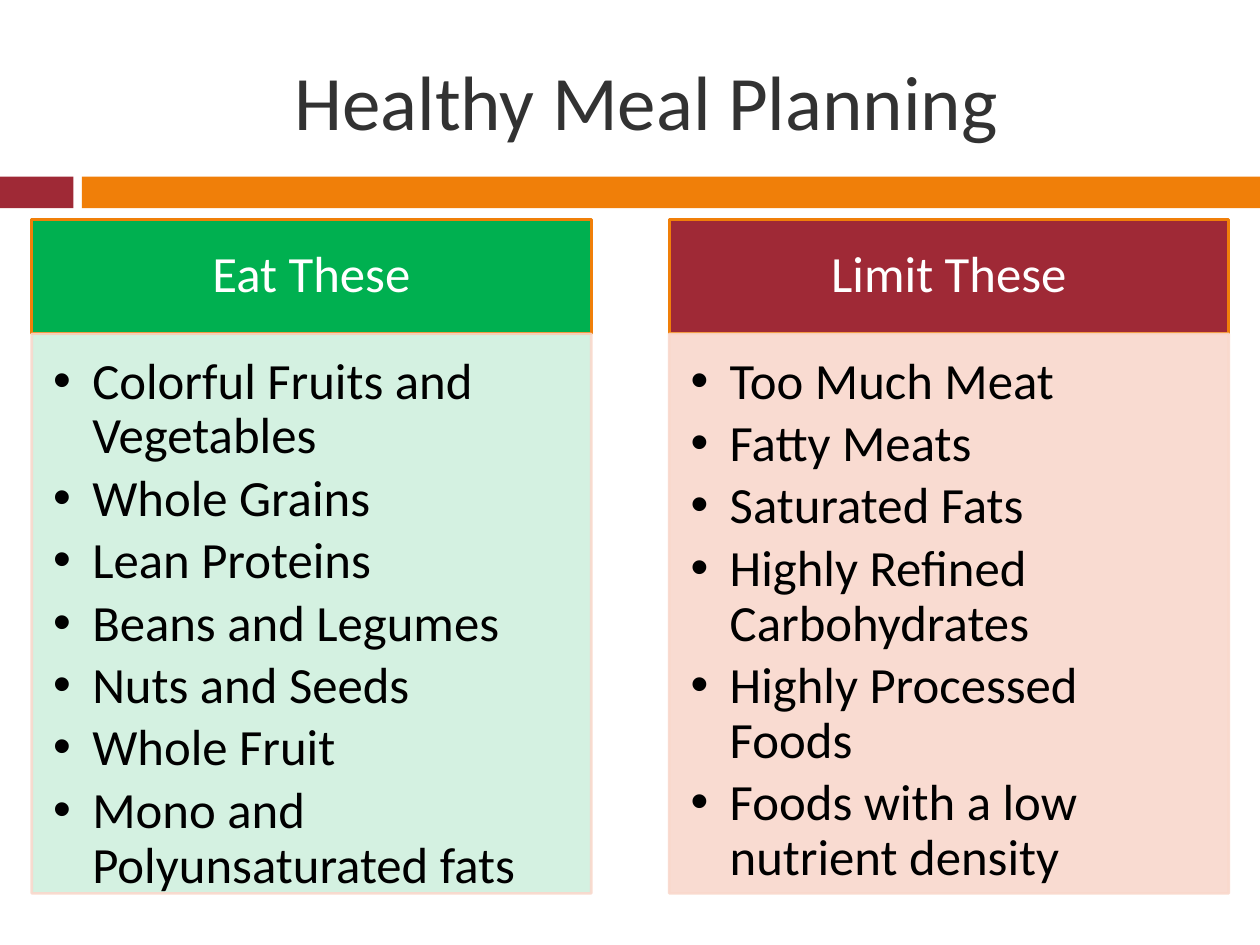
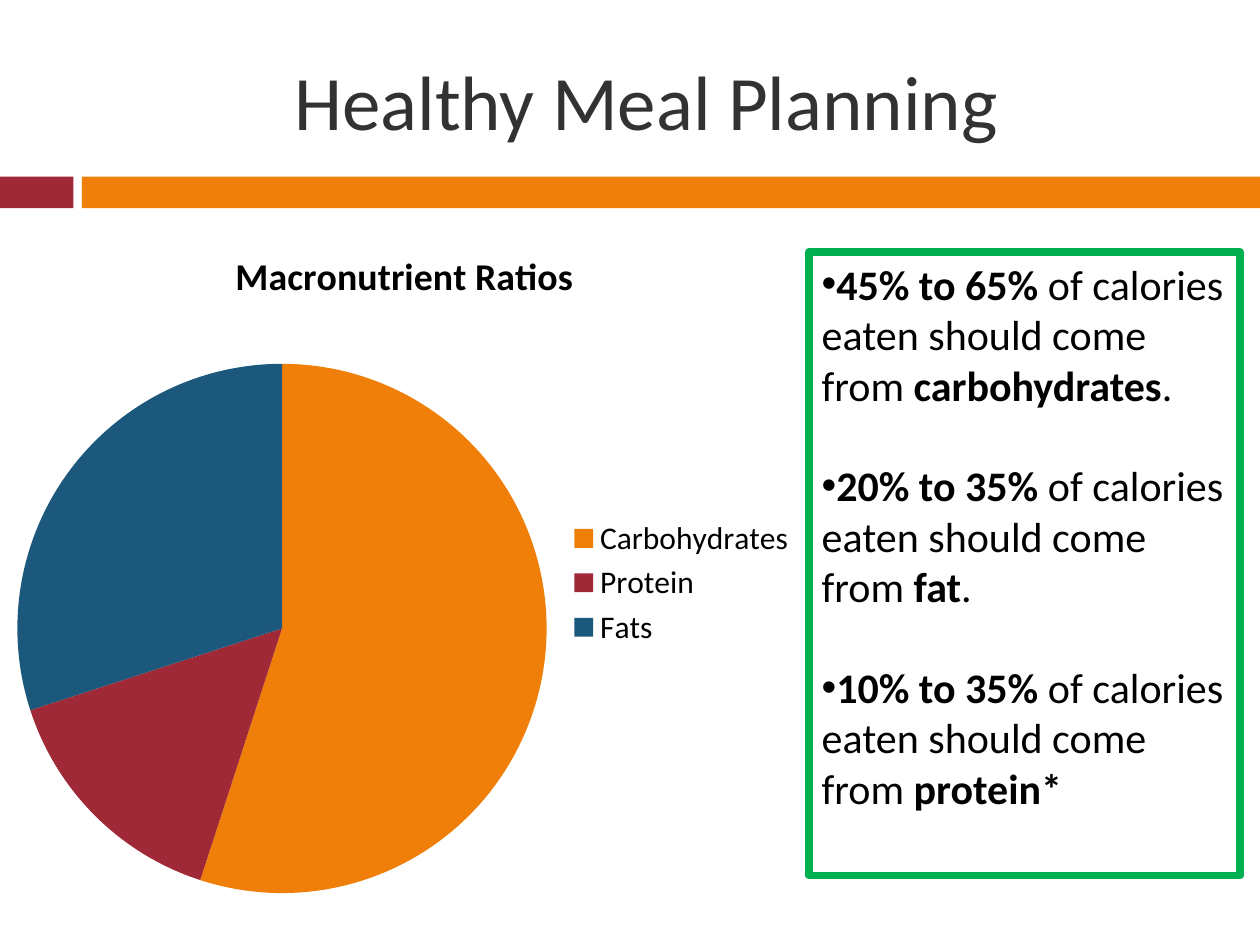
from lxml.etree import SubElement
from pptx import Presentation
from pptx.chart.data import CategoryChartData
from pptx.dml.color import RGBColor
from pptx.enum.chart import XL_CHART_TYPE, XL_LEGEND_POSITION
from pptx.enum.shapes import MSO_SHAPE
from pptx.enum.text import MSO_ANCHOR, MSO_AUTO_SIZE, PP_ALIGN
from pptx.oxml.ns import qn
from pptx.util import Cm, Pt

FONT = "Calibri"
COLORS = {
    "text": "000000", "title": "323232", "white": "FFFFFF",
    "orange": "F07F09", "red": "9F2936", "blue": "1B587C",
    "green": "00B050", "blush": "F9D8CC",
}
TITLE = "Healthy Meal Planning"
COMPARISON_LAYOUT, CONTENT_LAYOUT = 4, 1

EAT = ["Colorful Fruits and Vegetables", "Whole Grains", "Lean Proteins",
       "Beans and Legumes", "Nuts and Seeds", "Whole Fruit",
       "Mono and Polyunsaturated fats"]
LIMIT = ["Too Much Meat", "Fatty Meats", "Saturated Fats",
         "Highly Refined Carbohydrates", "Highly Processed Foods",
         "Foods with a low nutrient density"]
SHARES = {"Carbohydrates": (55, "orange"), "Protein": (15, "red"),
          "Fats": (30, "blue")}
ADVICE = [("45% to 65%", "carbohydrates", "."), ("20% to 35%", "fat", "."),
          ("10% to 35%", "protein*", "")]


def color(name):
    return RGBColor.from_string(COLORS[name])


def paint(fill, name, opacity=100):
    """Give a fill a solid colour, with opacity in percent."""
    fill.solid()
    fill.fore_color.rgb = color(name)
    if opacity < 100:
        tint = fill._xPr.find(qn("a:solidFill"))[0]
        SubElement(tint, qn("a:alpha"), val=str(opacity * 1000))


def outline(shape, name, width, opacity=100):
    shape.line.width = Pt(width)
    paint(shape.line.fill, name, opacity)


def style_font(font, size, name="text", bold=False):
    font.name, font.size, font.bold = FONT, Pt(size), bold
    font.color.rgb = color(name)


def add_span(para, text, size=24, name="text", bold=False):
    span = para.add_run()
    span.text = text
    style_font(span.font, size, name, bold)


def set_bullet(para, indent=0):
    """Add a round bullet with a hanging indent in centimetres."""
    properties = para._p.get_or_add_pPr()
    properties.set("marL", str(Cm(indent)))
    properties.set("indent", str(-Cm(indent)))
    SubElement(properties, qn("a:buChar"), char="•")


def place(box, left, top, width, height, anchor=MSO_ANCHOR.TOP, margins=None):
    """Move a placeholder and set up its text frame; lengths in centimetres."""
    box.left, box.top, box.width, box.height = map(Cm, (left, top, width, height))
    frame = box.text_frame
    frame.word_wrap = True
    frame.auto_size = MSO_AUTO_SIZE.NONE
    frame.vertical_anchor = anchor
    if margins:
        (frame.margin_left, frame.margin_top,
         frame.margin_right, frame.margin_bottom) = map(Cm, margins)
    return frame


def add_para(frame, index, align=PP_ALIGN.LEFT, line_spacing=1.0, after=0):
    para = frame.paragraphs[0] if index == 0 else frame.add_paragraph()
    para.alignment = align
    para.line_spacing = line_spacing
    para.space_before, para.space_after = Pt(0), Pt(after)
    return para


def add_band(page, left, width, name):
    band = page.shapes.add_shape(MSO_SHAPE.RECTANGLE, Cm(left), Cm(3.56),
                                 Cm(width), Cm(0.64))
    band.shadow.inherit = False
    paint(band.fill, name)
    band.line.fill.background()


def add_page(deck, layout):
    """Add a slide with the shared title and coloured bands."""
    page = deck.slides.add_slide(deck.slide_layouts[layout])
    add_band(page, 0, 1.48, "red")
    add_band(page, 1.65, 23.75, "orange")
    frame = place(page.shapes.title, 1.7, 0.64, 22.66, 2.74, MSO_ANCHOR.MIDDLE)
    add_span(add_para(frame, 0, PP_ALIGN.CENTER), TITLE, 44, "title")
    return page


def add_panel(heading, body, left, text, items, heading_fill, body_fill, opacity):
    """Fill one heading and the list below it."""
    width = 11.28
    frame = place(heading, left, 4.42, width, 2.31, MSO_ANCHOR.MIDDLE,
                  (0.58, 0.33, 0.58, 0.33))
    paint(heading.fill, heading_fill)
    outline(heading, "orange", 1.5)
    add_span(add_para(frame, 0, PP_ALIGN.CENTER, 0.9), text, 29, "white")

    frame = place(body, left, 6.73, width, 11.28,
                  margins=(0.43, 0.43, 0.58, 0.64))
    paint(body.fill, body_fill, opacity)
    outline(body, "blush", 1.5, 90)
    for index, item in enumerate(items):
        para = add_para(frame, index, line_spacing=0.9, after=4.35)
        set_bullet(para, 0.79)
        add_span(para, item, 29)


def add_ratio_chart(page):
    data = CategoryChartData()
    data.categories = list(SHARES)
    data.add_series("Series 1", [value for value, _ in SHARES.values()])
    chart = page.shapes.add_chart(XL_CHART_TYPE.PIE, Cm(0), Cm(4.45),
                                  Cm(16.31), Cm(14.6), data).chart
    style_font(chart.font, 18)
    chart.has_title = True
    add_span(chart.chart_title.text_frame.paragraphs[0],
             "Macronutrient Ratios", 21.6, bold=True)
    chart.has_legend = True
    chart.legend.position = XL_LEGEND_POSITION.RIGHT
    chart.legend.include_in_layout = False
    plot = chart.plots[0]
    plot.vary_by_categories = True
    for index, (_, name) in enumerate(SHARES.values()):
        paint(plot.series[0].points[index].format.fill, name)


def add_advice(box):
    frame = place(box, 16.31, 5.08, 8.69, 12.57)
    outline(box, "green", 4.5)
    for index, (share, nutrient, ending) in enumerate(ADVICE):
        para = add_para(frame, index, after=28.8)
        set_bullet(para)
        add_span(para, share, bold=True)
        add_span(para, " of calories eaten should come from ")
        add_span(para, nutrient, bold=True)
        if ending:
            add_span(para, ending)


def main():
    deck = Presentation()
    deck.slide_width, deck.slide_height = Cm(25.4), Cm(19.05)

    # Foods to eat and foods to limit
    page = add_page(deck, COMPARISON_LAYOUT)
    _, eat_heading, eat_list, limit_heading, limit_list = page.placeholders
    add_panel(eat_heading, eat_list, 0.64, "Eat These", EAT,
              "green", "green", 17)
    add_panel(limit_heading, limit_list, 13.49, "Limit These", LIMIT,
              "red", "blush", 90)

    # Macronutrient ratios
    page = add_page(deck, CONTENT_LAYOUT)
    add_ratio_chart(page)
    add_advice(page.placeholders[1])

    deck.save("out.pptx")


if __name__ == "__main__":
    main()
